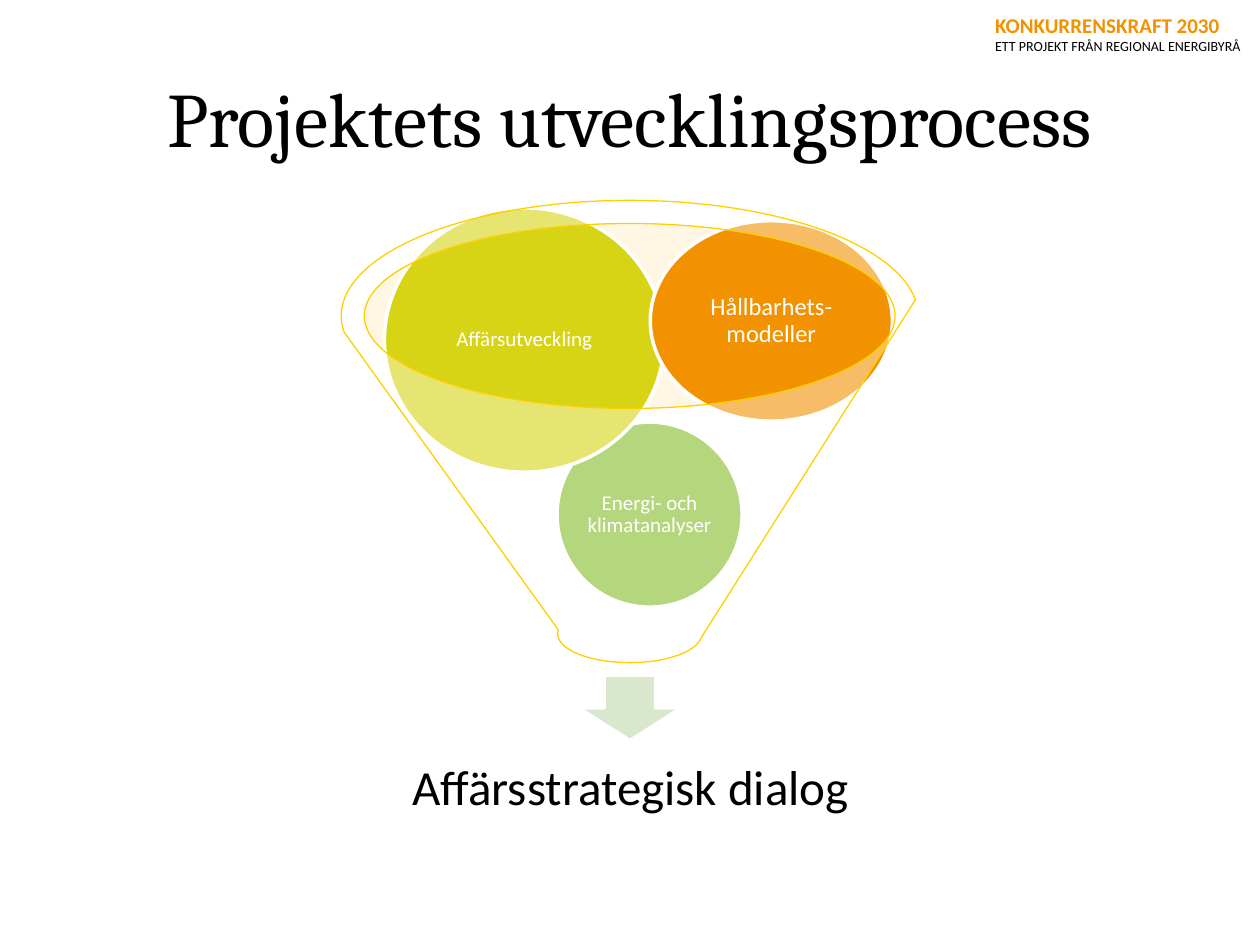
import pptx
import pptx.util
import pptx.dml.color
import pptx.enum.shapes
import pptx.enum.text
import lxml.etree

Cm = pptx.util.Cm
Pt = pptx.util.Pt
RGBColor = pptx.dml.color.RGBColor
SHAPE = pptx.enum.shapes.MSO_SHAPE
ALIGN = pptx.enum.text.PP_ALIGN
ANCHOR = pptx.enum.text.MSO_ANCHOR

BLACK = RGBColor(0, 0, 0)
WHITE = RGBColor(0xFF, 0xFF, 0xFF)
ORANGE = RGBColor(0xF3, 0x92, 0x00)
LIME = RGBColor(0xD6, 0xD4, 0x14)
GREEN = RGBColor(0x83, 0xBB, 0x26)
PALE_GREEN = RGBColor(0xD9, 0xE7, 0xCD)
CREAM = RGBColor(0xFF, 0xE9, 0xBD)
YELLOW = RGBColor(0xFF, 0xD0, 0x00)

HEADER = [("KONKURRENSKRAFT 2030", 12, ORANGE, True),
          ("ETT PROJEKT FRÅN REGIONAL ENERGIBYRÅ", 8, BLACK, False)]
TITLE = "Projektets utvecklingsprocess"
RESULT = "Affärsstrategisk dialog"
INPUTS = [
    ("Energi- och klimatanalyser", 12, GREEN, (11.23, 8.51, 3.73, 3.73)),
    ("Affärsutveckling", 12, LIME, (7.75, 4.19, 5.64, 5.33)),
    ("Hållbarhets-\vmodeller", 14, ORANGE, (13.11, 4.45, 4.88, 4.04)),
]


def style(paragraph, size, color, font="Calibri", bold=False):
    for run in paragraph.runs:
        run.font.name = font
        run.font.size = Pt(size)
        run.font.bold = bold
        run.font.color.rgb = color


def centre_text(shape, text, size, color, font="Calibri", inset=None, spacing=None):
    frame = shape.text_frame
    frame.word_wrap = True
    frame.vertical_anchor = ANCHOR.MIDDLE
    if inset is not None:
        frame.margin_left = frame.margin_right = Cm(inset)
        frame.margin_top = frame.margin_bottom = Cm(inset)
    paragraph = frame.paragraphs[0]
    paragraph.text = text
    paragraph.alignment = ALIGN.CENTER
    paragraph.line_spacing = spacing
    style(paragraph, size, color, font)


def add_text_box(slide, box):
    return slide.shapes.add_textbox(*map(Cm, box))


def add_figure(slide, kind, box, fill, opacity=None, line=None, width=2):
    figure = slide.shapes.add_shape(kind, *map(Cm, box))
    figure.shadow.inherit = False
    figure.fill.solid()
    figure.fill.fore_color.rgb = fill
    if opacity is not None:
        color = figure.fill._xPr.find(".//" + pptx.oxml.ns.qn("a:srgbClr"))
        alpha = lxml.etree.SubElement(color, pptx.oxml.ns.qn("a:alpha"))
        alpha.set("val", str(opacity * 1000))
    if line is None:
        figure.line.fill.background()
    else:
        figure.line.color.rgb = line
        figure.line.width = Pt(width)
    return figure


def main():
    deck = pptx.Presentation()
    deck.slide_width, deck.slide_height = Cm(25.4), Cm(19.05)
    slide = deck.slides.add_slide(deck.slide_layouts[6])

    header = add_text_box(slide, (19.81, 0.13, 5.77, 1.12)).text_frame
    header.word_wrap = False
    header.text = "\n".join(text for text, *_ in HEADER)
    for paragraph, (_, size, color, bold) in zip(header.paragraphs, HEADER):
        paragraph.alignment = ALIGN.LEFT
        style(paragraph, size, color, bold=bold)

    title = add_text_box(slide, (1.27, 0.76, 22.86, 3.18))
    centre_text(title, TITLE, 44, BLACK, "Cambria")

    add_figure(slide, SHAPE.OVAL, (7.32, 4.5, 10.72, 3.73), CREAM, 40)
    add_figure(slide, SHAPE.DOWN_ARROW, (11.66, 13.61, 2.08, 1.32), PALE_GREEN, line=WHITE)
    result = add_text_box(slide, (7.72, 14.68, 9.98, 2.49))
    centre_text(result, RESULT, 28, BLACK, inset=0.56, spacing=0.9)

    for text, size, color, box in INPUTS:
        circle = add_figure(slide, SHAPE.OVAL, box, color, line=WHITE)
        centre_text(circle, text, size, WHITE, inset=0.05, spacing=0.9)

    add_figure(slide, SHAPE.FUNNEL, (6.88, 4.04, 11.63, 9.32), WHITE, 40, YELLOW, 0.75)
    deck.save("out.pptx")


if __name__ == "__main__":
    main()
